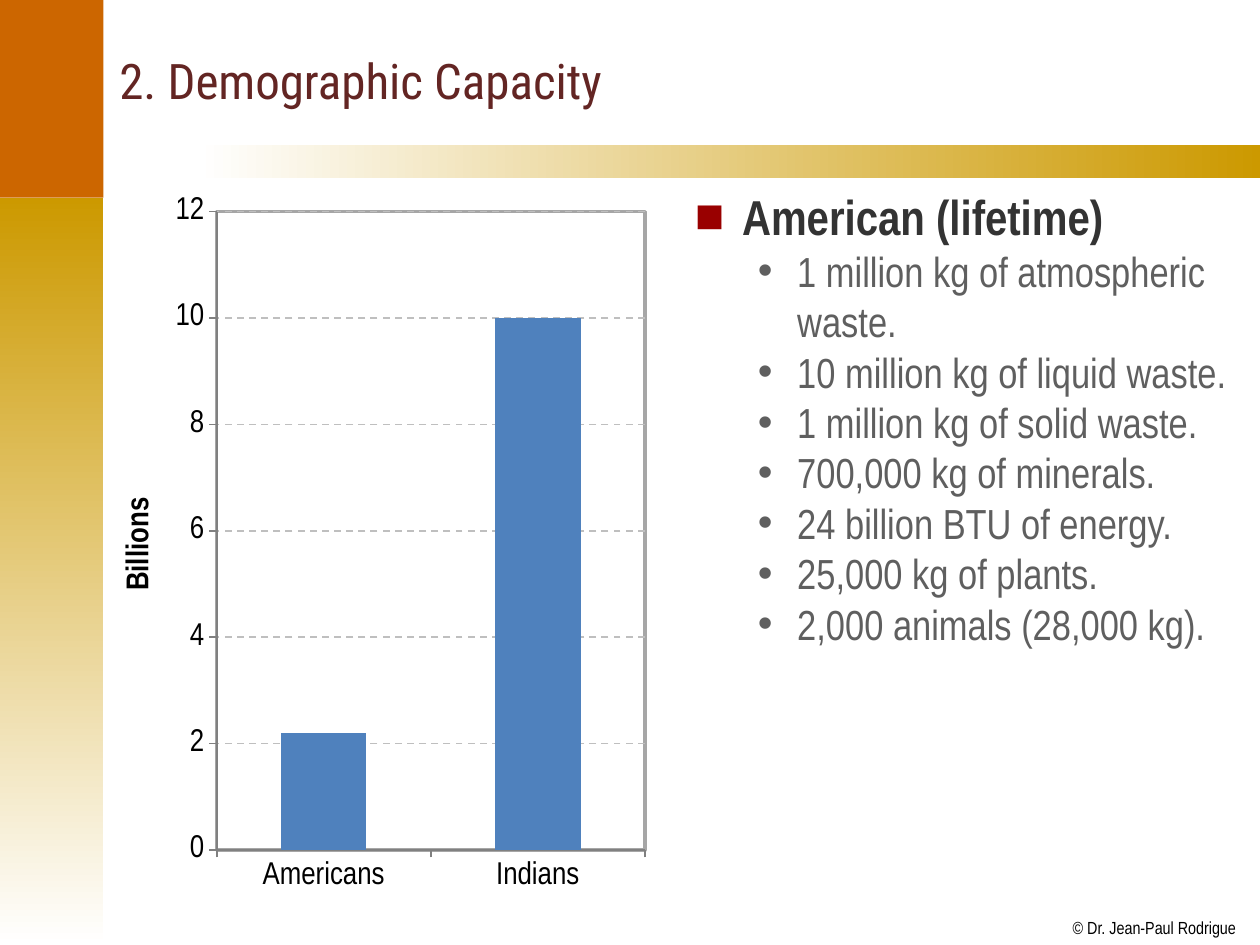
from dataclasses import dataclass
from typing import Optional

from lxml import etree
from pptx import Presentation
from pptx import util as u
from pptx.chart import data as chart_data
from pptx.dml.color import RGBColor
from pptx.enum import chart as ch, dml, shapes, text
from pptx.oxml import parse_xml
from pptx.oxml.ns import nsdecls, qn

WHITE = RGBColor(0xFF, 0xFF, 0xFF)
BLACK = RGBColor(0, 0, 0)
GOLD = RGBColor(0xCC, 0x99, 0x00)
ORANGE = RGBColor(0xCC, 0x66, 0x00)
MAROON = RGBColor(0x63, 0x25, 0x23)
RED = RGBColor(0x99, 0x00, 0x00)
DARK_GRAY = RGBColor(0x33, 0x33, 0x33)
MID_GRAY = RGBColor(0x5F, 0x5F, 0x5F)
AXIS_GRAY = RGBColor(0x80, 0x80, 0x80)
FRAME_GRAY = RGBColor(0xA6, 0xA6, 0xA6)
GRID_GRAY = RGBColor(0xBF, 0xBF, 0xBF)
BLUE = RGBColor(0x4F, 0x81, 0xBD)

BODY_FONT = "Arial Narrow"
TITLE_FONT = "Roboto Condensed"
PLOT_LAYOUT = {"x": 0.2, "y": 0.043, "w": 0.767, "h": 0.875}


@dataclass
class Panel:
    left: float
    top: float
    width: float
    height: float
    colors: tuple
    angle: float = 0


@dataclass
class Level:
    bullet: str
    margin: float
    hanging: float
    style: dict
    bullet_color: Optional[RGBColor] = None


PANELS = [
    Panel(-0.7, 113, 59.8, 427, (GOLD, WHITE), 270),
    Panel(113, 82.8, 607, 18.7, (WHITE, GOLD)),
    Panel(-0.7, -0.7, 59.8, 113.7, (ORANGE,)),
]
HEADING = Level("■", 27, 27, {"name": BODY_FONT, "size": u.Pt(28), "bold": True,
                              "color": DARK_GRAY}, RED)
ITEM = Level("•", 58.5, 22.5, {"name": BODY_FONT, "size": u.Pt(24), "bold": False,
                               "color": MID_GRAY})
ITEMS = [
    "1 million kg of atmospheric waste.",
    "10 million kg of liquid waste.",
    "1 million kg of solid waste.",
    "700,000 kg of minerals.",
    "24 billion BTU of energy.",
    "25,000 kg of plants.",
    "2,000 animals (28,000 kg).",
]


def set_font(font, style: dict) -> None:
    for key, value in style.items():
        if key == "color":
            font.color.rgb = value
        else:
            setattr(font, key, value)


def set_line(line, color: RGBColor, width: float) -> None:
    line.color.rgb = color
    line.width = u.Pt(width)


def place(box, left: float, top: float, width: float, height: float) -> None:
    for key, value in {"left": left, "top": top, "width": width, "height": height}.items():
        setattr(box, key, u.Pt(value))


def draw_panel(page, panel: Panel) -> None:
    box = page.shapes.add_shape(
        shapes.MSO_SHAPE.RECTANGLE, u.Pt(panel.left), u.Pt(panel.top),
        u.Pt(panel.width), u.Pt(panel.height))
    box.shadow.inherit = False
    box.line.fill.background()
    if len(panel.colors) == 1:
        box.fill.solid()
        box.fill.fore_color.rgb = panel.colors[0]
        return
    box.fill.gradient()
    box.fill.gradient_angle = panel.angle
    for stop, color, position in zip(box.fill.gradient_stops, panel.colors, (0, 1)):
        stop.color.rgb = color
        stop.position = position


def add_bullet(para, words: str, level: Level) -> None:
    props = para._p.get_or_add_pPr()
    props.set("marL", str(u.Pt(level.margin)))
    props.set("indent", str(-u.Pt(level.hanging)))
    if level.bullet_color is not None:
        tint = etree.SubElement(props, qn("a:buClr"))
        etree.SubElement(tint, qn("a:srgbClr")).set("val", str(level.bullet_color))
    etree.SubElement(props, qn("a:buFont")).set("typeface", "Arial")
    etree.SubElement(props, qn("a:buChar")).set("char", level.bullet)
    span = para.add_run()
    span.text = words
    set_font(span.font, level.style)


def draw_chart(page) -> None:
    data = chart_data.CategoryChartData()
    data.categories = ["Americans", "Indians"]
    data.add_series("Series 1", (2.2, 10))
    chart = page.shapes.add_chart(
        ch.XL_CHART_TYPE.COLUMN_CLUSTERED, u.Pt(60), u.Pt(103), u.Pt(319), u.Pt(417),
        data).chart
    chart.has_legend = False
    chart.has_title = False
    label_style = {"name": BODY_FONT, "size": u.Pt(18), "color": BLACK}
    set_font(chart.font, label_style)

    # Columns
    plot = chart.plots[0]
    plot.gap_width = 150
    plot.vary_by_categories = False
    fill = plot.series[0].format.fill
    fill.solid()
    fill.fore_color.rgb = BLUE

    # Axes and gridlines
    for axis in (chart.category_axis, chart.value_axis):
        axis.major_tick_mark = ch.XL_TICK_MARK.OUTSIDE
        axis.minor_tick_mark = ch.XL_TICK_MARK.NONE
        set_line(axis.format.line, AXIS_GRAY, 1)
    values = chart.value_axis
    for key, value in {"minimum_scale": 0, "maximum_scale": 12, "major_unit": 2,
                       "has_major_gridlines": True, "has_title": True}.items():
        setattr(values, key, value)
    grid = values.major_gridlines.format.line
    set_line(grid, GRID_GRAY, 1)
    grid.dash_style = dml.MSO_LINE.DASH
    para = values.axis_title.text_frame.paragraphs[0]
    span = para.add_run()
    span.text = "Billions"
    set_font(span.font, {**label_style, "bold": True})

    # Plot position and frame
    area = chart._chartSpace.chart.plotArea
    for old in area.findall(qn("c:layout")):
        area.remove(old)
    numbers = "".join(f'<c:{key} val="{value}"/>' for key, value in PLOT_LAYOUT.items())
    area.insert(0, parse_xml(
        f'<c:layout {nsdecls("c")}><c:manualLayout><c:layoutTarget val="inner"/>'
        f'<c:xMode val="edge"/><c:yMode val="edge"/>{numbers}</c:manualLayout></c:layout>'))
    area.append(parse_xml(
        f'<c:spPr {nsdecls("c", "a")}><a:noFill/><a:ln w="{u.Pt(2)}"><a:solidFill>'
        f'<a:srgbClr val="{FRAME_GRAY}"/></a:solidFill></a:ln></c:spPr>'))


def main() -> None:
    deck = Presentation()
    deck.slide_width, deck.slide_height = u.Pt(720), u.Pt(540)
    page = deck.slides.add_slide(deck.slide_layouts[5])

    # Side and header bands
    for panel in PANELS:
        draw_panel(page, panel)

    # Title
    title = page.shapes.title
    place(title, 61, 8, 647, 75)
    frame = title.text_frame
    frame.auto_size = text.MSO_AUTO_SIZE.NONE
    frame.vertical_anchor = text.MSO_ANCHOR.MIDDLE
    para = frame.paragraphs[0]
    para.alignment = text.PP_ALIGN.LEFT
    span = para.add_run()
    span.text = "2. Demographic Capacity"
    set_font(span.font, {"name": TITLE_FONT, "size": u.Pt(28), "color": MAROON})

    draw_chart(page)

    # Lifetime list
    box = page.shapes.add_textbox(u.Pt(390), u.Pt(103), u.Pt(319), u.Pt(417))
    frame = box.text_frame
    frame.word_wrap = True
    add_bullet(frame.paragraphs[0], "American (lifetime)", HEADING)
    for words in ITEMS:
        para = frame.add_paragraph()
        para.level = 1
        add_bullet(para, words, ITEM)

    # Copyright line
    box = page.shapes.add_textbox(u.Pt(613), u.Pt(524), u.Pt(94), u.Pt(12))
    frame = box.text_frame
    for side in ("left", "top", "right", "bottom"):
        setattr(frame, f"margin_{side}", 0)
    frame.word_wrap = False
    span = frame.paragraphs[0].add_run()
    span.text = "© Dr. Jean-Paul Rodrigue"
    set_font(span.font, {"name": BODY_FONT, "size": u.Pt(10), "color": BLACK})

    deck.save("out.pptx")


if __name__ == "__main__":
    main()
